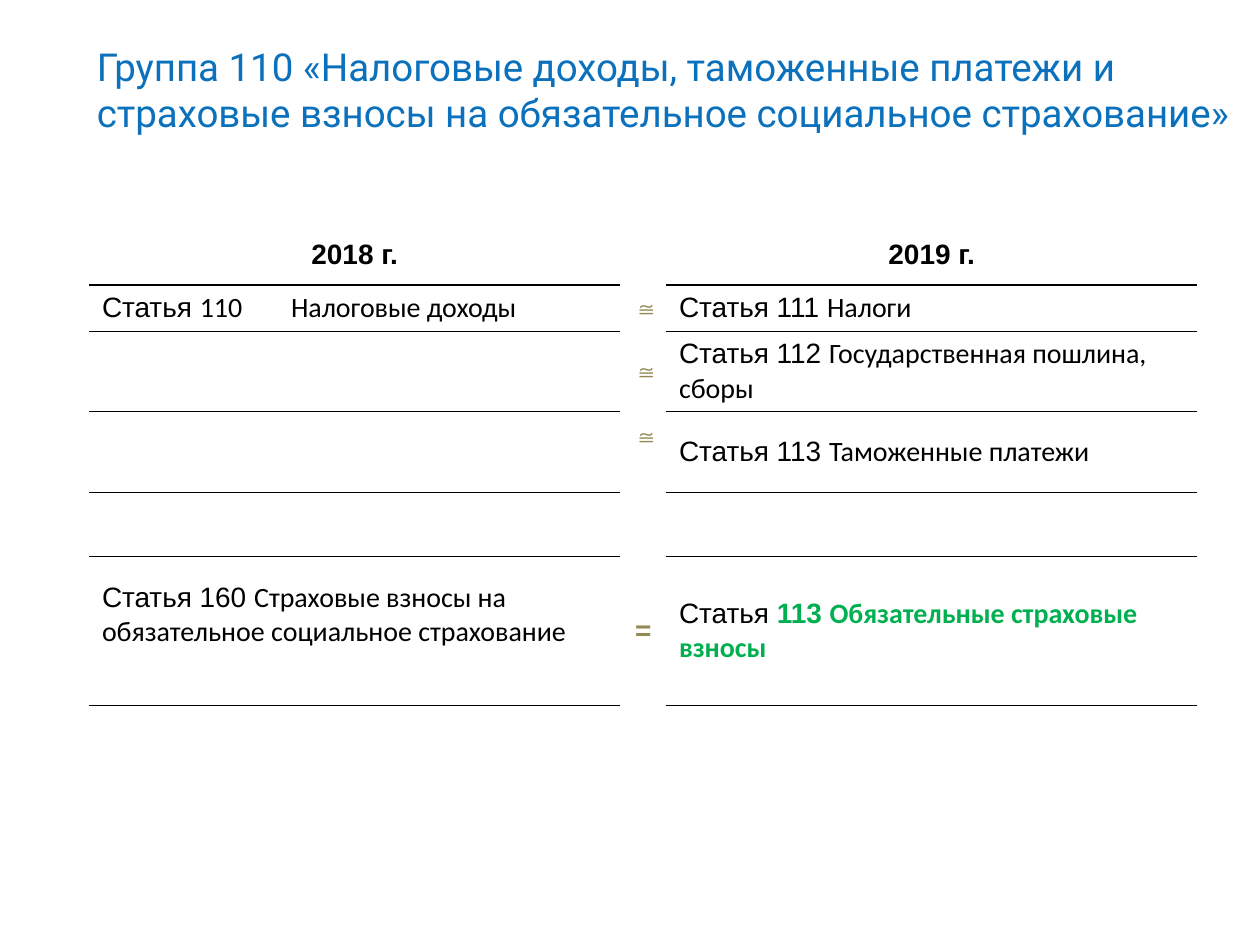
from dataclasses import dataclass

from lxml.etree import SubElement
from pptx import Presentation
from pptx.dml.color import RGBColor
from pptx.enum.text import MSO_ANCHOR, PP_ALIGN
from pptx.oxml.ns import qn
from pptx.util import Inches, Pt


@dataclass(frozen=True)
class Theme:
    title_color: str = "0B71BD"
    text_color: str = "000000"
    sign_color: str = "948A54"
    accent_color: str = "00B050"
    title_font: str = "Roboto"
    label_font: str = "Arial"
    name_font: str = "Calibri"
    title_size: int = 22
    table_size: int = 16
    heavy_line: float = 1.5
    thin_line: float = 0.5


THEME = Theme()
COLUMN_WIDTHS = (4.21, 0.37, 4.21)
ROW_HEIGHTS = (0.48, 0.36, 0.64, 0.64, 0.51, 1.18, 0.36)
SIGN_COLUMN = 1
RAISED_MARGIN = 0.3


def add_run(paragraph, text, font=THEME.label_font, size=THEME.table_size,
            color=THEME.text_color, bold=False):
    run = paragraph.add_run()
    run.text = text
    run.font.name = font
    run.font.size = Pt(size)
    run.font.bold = bold
    run.font.color.rgb = RGBColor.from_string(color)


def add_title(slide, text):
    shape = slide.shapes.add_textbox(Inches(0.67), Inches(0.29), Inches(9.45), Inches(0.84))
    shape.text_frame.word_wrap = True
    add_run(shape.text_frame.paragraphs[0], text, font=THEME.title_font,
            size=THEME.title_size, color=THEME.title_color)


def set_borders(cell, top=0, bottom=0):
    """Draw rules above and below a cell; a width of 0 leaves that edge bare."""
    properties = cell._tc.get_or_add_tcPr()
    for tag, width in (("a:lnL", 0), ("a:lnR", 0), ("a:lnT", top), ("a:lnB", bottom)):
        line = SubElement(properties, qn(tag), w=str(Pt(width)))
        if width:
            fill = SubElement(line, qn("a:solidFill"))
            SubElement(fill, qn("a:srgbClr"), val=THEME.text_color)
        else:
            SubElement(line, qn("a:noFill"))


def add_comparison_table(slide):
    frame = slide.shapes.add_table(
        len(ROW_HEIGHTS), len(COLUMN_WIDTHS), Inches(0.71), Inches(1.78),
        Inches(sum(COLUMN_WIDTHS)), Inches(sum(ROW_HEIGHTS)))
    table = frame.table
    table.first_row = False
    table.horz_banding = False
    for column, width in zip(table.columns, COLUMN_WIDTHS):
        column.width = Inches(width)
    for row, height in zip(table.rows, ROW_HEIGHTS):
        row.height = Inches(height)

    # Width of the rule between each row and the next; none at the outer edges.
    rules = [0, THEME.heavy_line] + [THEME.thin_line] * (len(ROW_HEIGHTS) - 2) + [0]
    for row_index, row in enumerate(table.rows):
        for column_index, cell in enumerate(row.cells):
            if column_index == SIGN_COLUMN:
                set_borders(cell)
            else:
                set_borders(cell, rules[row_index], rules[row_index + 1])
            cell.fill.background()
            cell.vertical_anchor = MSO_ANCHOR.MIDDLE
    return table


def fill_header(cell, text):
    paragraph = cell.text_frame.paragraphs[0]
    paragraph.alignment = PP_ALIGN.CENTER
    add_run(paragraph, text, bold=True)


def fill_article(cell, label, name, number="", accent=False):
    """Write an article label and its name; an accent marks number and name."""
    paragraph = cell.text_frame.paragraphs[0]
    emphasis = {"color": THEME.accent_color, "bold": True} if accent else {}
    add_run(paragraph, label)
    if number:
        add_run(paragraph, number, **emphasis)
    add_run(paragraph, name, font=THEME.name_font, **emphasis)


def fill_sign(cell, sign, bold=False):
    paragraph = cell.text_frame.paragraphs[0]
    paragraph.alignment = PP_ALIGN.CENTER
    add_run(paragraph, sign, color=THEME.sign_color, bold=bold)


def main():
    presentation = Presentation()
    presentation.slide_width = Inches(10)
    presentation.slide_height = Inches(7.5)
    slide = presentation.slides.add_slide(presentation.slide_layouts[6])

    add_title(slide, "Группа 110 «Налоговые доходы, таможенные платежи и "
                     "страховые взносы на обязательное социальное страхование»")
    table = add_comparison_table(slide)
    fill_header(table.cell(0, 0), "2018 г.")
    fill_header(table.cell(0, 2), "2019 г.")

    fill_article(table.cell(1, 0), "Статья ", "110\tНалоговые доходы")
    fill_article(table.cell(5, 0), "Статья 160 ",
                 "Страховые взносы на обязательное социальное страхование")

    fill_article(table.cell(1, 2), "Статья 111 ", "Налоги")
    fill_article(table.cell(2, 2), "Статья 112 ", "Государственная пошлина, сборы")
    fill_article(table.cell(3, 2), "Статья 113 ", "Таможенные платежи")
    fill_article(table.cell(5, 2), "Статья ", "Обязательные страховые взносы",
                 number="113 ", accent=True)

    for row_index in (1, 2, 3):
        fill_sign(table.cell(row_index, SIGN_COLUMN), "≅")
    fill_sign(table.cell(5, SIGN_COLUMN), "=", bold=True)

    for raised_cell in (table.cell(3, SIGN_COLUMN), table.cell(5, 0)):
        raised_cell.margin_bottom = Inches(RAISED_MARGIN)

    presentation.save("out.pptx")


if __name__ == "__main__":
    main()
